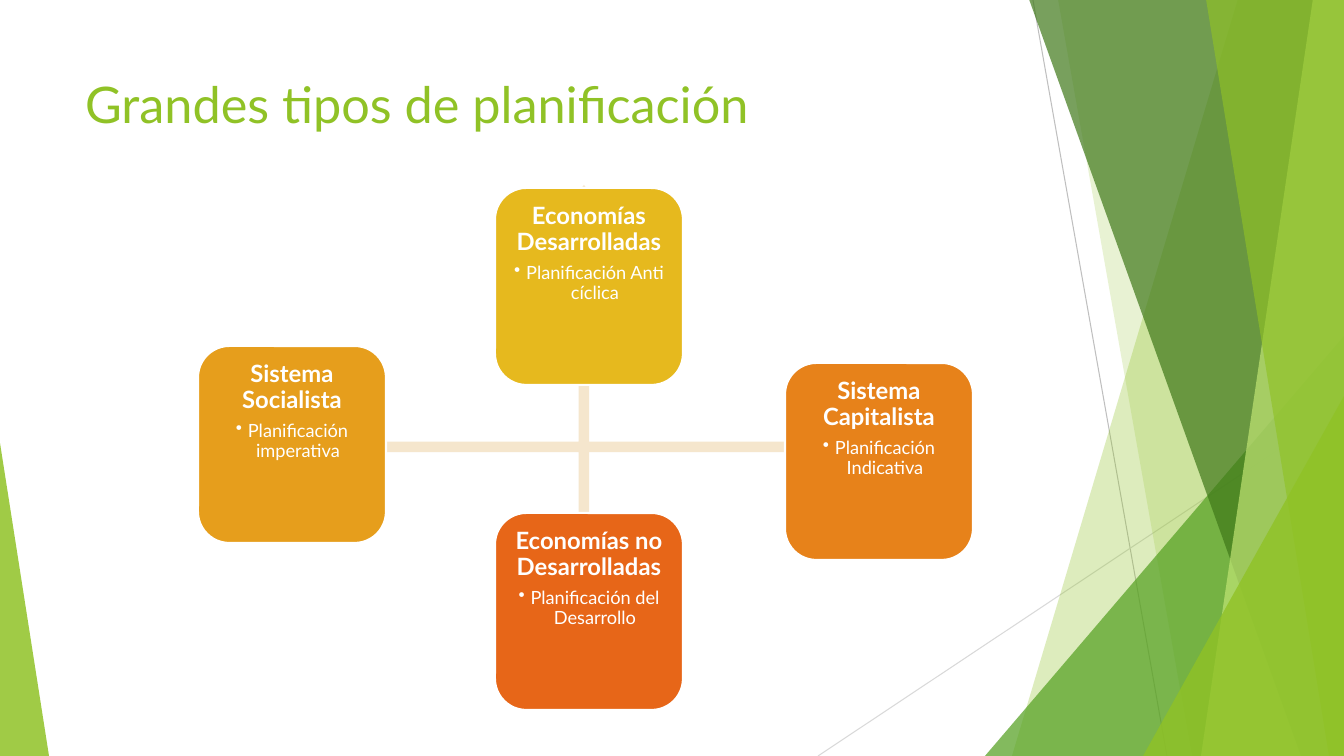
from lxml.etree import SubElement
from pptx import Presentation
from pptx.dml.color import RGBColor
from pptx.enum.shapes import MSO_CONNECTOR, MSO_SHAPE
from pptx.enum.text import MSO_ANCHOR, PP_ALIGN
from pptx.oxml.ns import qn
from pptx.util import Emu, Pt

EMU_PER_PX = 914400 / 100.8
SLIDE_WIDTH, SLIDE_HEIGHT = 1344, 756
FONT = "Lato"
COLORS = {
    "green": "90C226", "mid green": "54A021", "dark green": "3F7819",
    "lime": "C0E474", "gray": "BFBFBF", "light gray": "D9D9D9",
    "white": "FFFFFF", "cream": "F5E6CD", "yellow": "E6B91E",
    "amber": "E69E1C", "orange": "E7821A", "red orange": "E76618",
}

TITLE = "Grandes tipos de planificación"
TITLE_BOX = (75, 68, 947, 145)

# heading, planning type, color, left, top
CARDS = [
    ("Economías Desarrolladas", "Planificación Anti cíclica", "yellow", 495, 188),
    ("Sistema Socialista", "Planificación imperativa", "amber", 198, 346),
    ("Sistema Capitalista", "Planificación Indicativa", "orange", 785, 363),
    ("Economías no Desarrolladas", "Planificación del Desarrollo", "red orange", 495, 513),
]
CARD_SIZE = (188, 197)
CARD_INSET = 7
BULLET_INDENT = 12
CROSS_BOX = (322, 185, 524, 524)
CROSS_ADJUSTMENTS = (0.02, 0.04, 0.05)

# start, end, color
RAYS = [
    ((1033, 0), (1167, 756), "gray"),
    ((1344, 406), (818, 756), "light gray"),
]
# Bands reach the right edge: top-left x, bottom-left x, color, opacity %
# Facets are right triangles: box, apex side (0 left, 1 right), color, opacity %
BACKDROP = [
    ("band", (1238, 1012), "green", 30),
    ("band", (1058, 1192), "green", 20),
    ("facet", ((985, 336, 359, 420), 1), "mid green", 72),
    ("band", (1029, 1301), "dark green", 70),
    ("band", (1313, 1201), "lime", 70),
    ("band", (1206, 1329), "green", 65),
    ("facet", ((1143, 396, 201, 360), 1), "green", 80),
    ("facet", ((0, 443, 49, 313), 0), "green", 85),
]


def px(length):
    return Emu(round(length * EMU_PER_PX))


def rgb(color):
    return RGBColor.from_string(COLORS[color])


def paint(shape, color, opacity=100, outline=None):
    shape.shadow.inherit = False
    shape.fill.solid()
    shape.fill.fore_color.rgb = rgb(color)
    if opacity < 100:
        srgb = shape.fill._xPr.find(".//" + qn("a:srgbClr"))
        SubElement(srgb, qn("a:alpha"), val=str(opacity * 1000))
    if outline:
        shape.line.color.rgb = rgb(outline)
        shape.line.width = Pt(1.5)
    else:
        shape.line.fill.background()


def add_preset(slide, preset, box, adjustments=()):
    shape = slide.shapes.add_shape(preset, *map(px, box))
    for index, value in enumerate(adjustments):
        shape.adjustments[index] = value
    return shape


def add_band(slide, top_x, bottom_x):
    outline = slide.shapes.build_freeform(top_x, -1, scale=EMU_PER_PX)
    outline.add_line_segments([
        (SLIDE_WIDTH, -1), (SLIDE_WIDTH, SLIDE_HEIGHT), (bottom_x, SLIDE_HEIGHT),
    ], close=True)
    return outline.convert_to_shape()


def add_ray(slide, start, end, color):
    ray = slide.shapes.add_connector(MSO_CONNECTOR.STRAIGHT, *map(px, start + end))
    ray.line.color.rgb = rgb(color)
    ray.line.width = Pt(0.75)
    SubElement(ray._element.spPr, qn("a:effectLst"))


def write(paragraph, text, size, color="white", bold=False, align=PP_ALIGN.CENTER,
          line_spacing=0.9, space_after=0, bullet=False):
    paragraph.alignment = align
    paragraph.line_spacing = line_spacing
    paragraph.space_after = Pt(space_after)
    if bullet:
        properties = paragraph._p.get_or_add_pPr()
        properties.set("marL", str(px(BULLET_INDENT)))
        properties.set("indent", str(-px(BULLET_INDENT)))
        SubElement(properties, qn("a:buChar"), char="•")
    run = paragraph.add_run()
    run.text = text
    run.font.name = FONT
    run.font.size = Pt(size)
    run.font.bold = bold
    run.font.color.rgb = rgb(color)


def add_card(slide, heading, planning, color, left, top):
    card = add_preset(slide, MSO_SHAPE.ROUNDED_RECTANGLE, (left, top, *CARD_SIZE))
    paint(card, color, outline="white")
    frame = card.text_frame
    frame.word_wrap = True
    frame.vertical_anchor = MSO_ANCHOR.TOP
    frame.margin_left = frame.margin_right = px(CARD_INSET)
    frame.margin_top = frame.margin_bottom = px(CARD_INSET)
    write(frame.paragraphs[0], heading, 17, bold=True, space_after=6)
    write(frame.add_paragraph(), planning, 13, bullet=True)


def main():
    deck = Presentation()
    deck.slide_width, deck.slide_height = px(SLIDE_WIDTH), px(SLIDE_HEIGHT)
    slide = deck.slides.add_slide(deck.slide_layouts[5])

    for ray in RAYS:
        add_ray(slide, *ray)
    for kind, geometry, color, opacity in BACKDROP:
        if kind == "band":
            part = add_band(slide, *geometry)
        else:
            box, apex = geometry
            part = add_preset(slide, MSO_SHAPE.ISOSCELES_TRIANGLE, box, [apex])
        paint(part, color, opacity)

    title = slide.shapes.title
    title.left, title.top, title.width, title.height = map(px, TITLE_BOX)
    title.text_frame.word_wrap = True
    title.text_frame.vertical_anchor = MSO_ANCHOR.TOP
    write(title.text_frame.paragraphs[0], TITLE, 36, color="green",
          align=PP_ALIGN.LEFT, line_spacing=1.0)

    cross = add_preset(slide, MSO_SHAPE.QUAD_ARROW, CROSS_BOX, CROSS_ADJUSTMENTS)
    paint(cross, "cream")
    for card in CARDS:
        add_card(slide, *card)

    deck.save("out.pptx")


if __name__ == "__main__":
    main()
